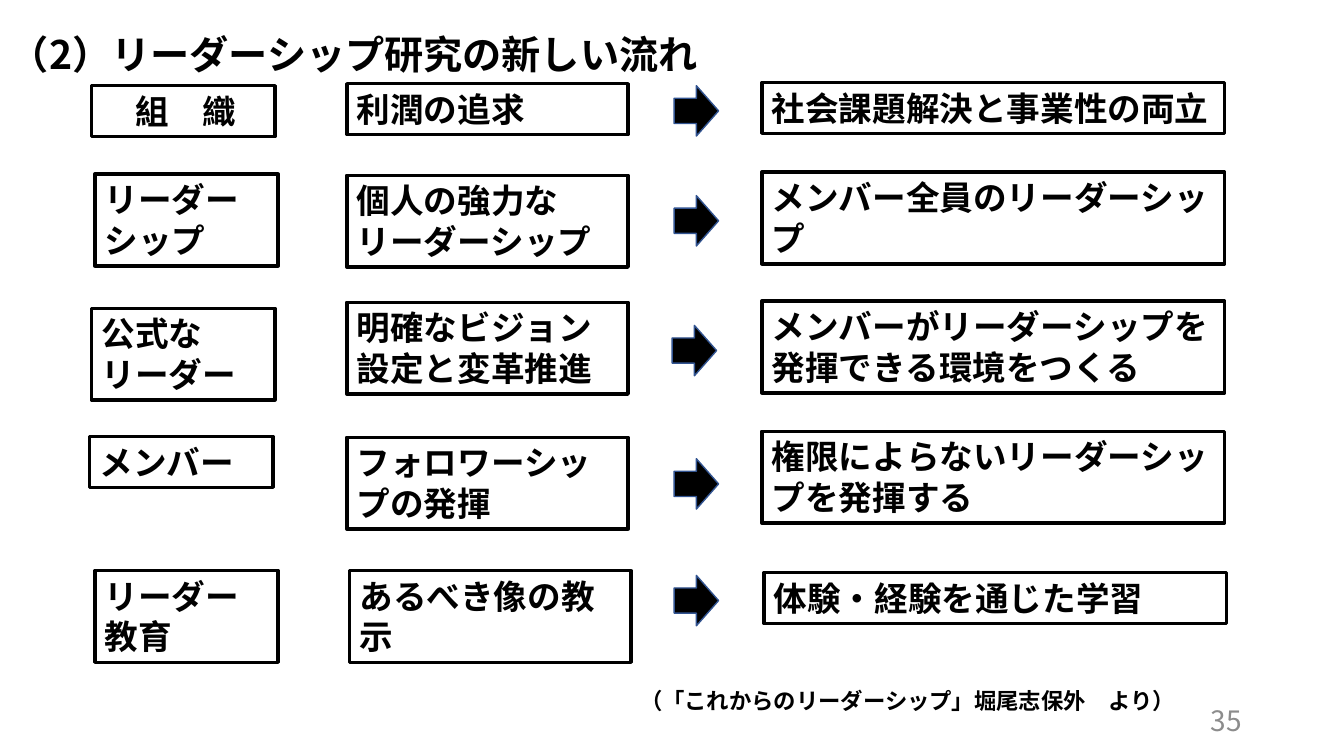
from lxml import etree
from pptx import Presentation
from pptx.dml.color import RGBColor
from pptx.enum.shapes import MSO_SHAPE
from pptx.enum.text import MSO_ANCHOR, PP_ALIGN
from pptx.oxml.ns import qn
from pptx.util import Cm, Pt

# Content
FONT = "Noto Sans CJK JP"
COLORS = {"ink": "000000", "arrow_edge": "325491", "page": "8C8C8C"}
TITLE = "（2）リーダーシップ研究の新しい流れ"
CITATION = "（「これからのリーダーシップ」堀尾志保外　より）"
PAGE = "35"

# Each row: (text, left, top, lines) for theme, old view, new view; then arrow (left, top)
ROWS = [
    (("　組　織", 2.31, 2.16, 1), ("利潤の追求", 8.74, 2.11, 1),
     ("社会課題解決と事業性の両立", 19.2, 2.08, 1), (16.99, 2.16)),
    (("リーダーシップ", 2.39, 4.39, 2), ("個人の強力なリーダーシップ", 8.74, 4.42, 2),
     ("メンバー全員のリーダーシップ", 19.2, 4.34, 2), (16.99, 4.93)),
    (("公式なリーダー", 2.31, 7.77, 2), ("明確なビジョン設定と変革推進", 8.74, 7.62, 2),
     ("メンバーがリーダーシップを発揮できる環境をつくる", 19.2, 7.59, 2), (16.94, 8.2)),
    (("メンバー", 2.26, 11, 1), ("フォロワーシップの発揮", 8.74, 11.02, 2),
     ("権限によらないリーダーシップを発揮する", 19.2, 10.87, 2), (16.99, 11.56)),
    (("リーダー教育", 2.39, 14.38, 2), ("あるべき像の教示", 8.81, 14.38, 2),
     ("体験・経験を通じた学習", 19.25, 14.43, 1), (16.99, 14.5)),
]
COLUMN_WIDTHS = (4.62, 7.09, 11.66)
BOX_HEIGHTS = {1: 1.28, 2: 2.31}
ARROW_SIZE = (1.12, 1.27)

deck = Presentation()
deck.slide_width, deck.slide_height = Cm(33.87), Cm(19.05)
slide = deck.slides.add_slide(deck.slide_layouts[6])


def rgb(name):
    return RGBColor.from_string(COLORS[name])


def write(shape, text, size, color="ink", bold=True,
          align=PP_ALIGN.LEFT, anchor=MSO_ANCHOR.TOP):
    frame = shape.text_frame
    frame.word_wrap = True
    frame.vertical_anchor = anchor
    paragraph = frame.paragraphs[0]
    paragraph.text = text
    paragraph.alignment = align
    font = paragraph.font
    font.size, font.bold, font.name = Pt(size), bold, FONT
    font.color.rgb = rgb(color)
    # East Asian typeface
    defaults = paragraph._p.pPr.find(qn("a:defRPr"))
    etree.SubElement(defaults, qn("a:ea")).set("typeface", FONT)


def add_label(text, left, top, width, height, size, **style):
    label = slide.shapes.add_textbox(Cm(left), Cm(top), Cm(width), Cm(height))
    write(label, text, size, **style)


def add_outlined(kind, left, top, width, height, edge, weight):
    shape = slide.shapes.add_shape(kind, Cm(left), Cm(top), Cm(width), Cm(height))
    shape.shadow.inherit = False
    shape.line.color.rgb = rgb(edge)
    shape.line.width = Pt(weight)
    return shape


# Title
add_label(TITLE, 0, 0.64, 21.49, 1.45, 28)

# Rows of boxes, with an arrow from old view to new view
for *cells, arrow_place in ROWS:
    for (text, left, top, lines), width in zip(cells, COLUMN_WIDTHS):
        box = add_outlined(MSO_SHAPE.RECTANGLE, left, top, width,
                           BOX_HEIGHTS[lines], "ink", 2.5)
        box.fill.background()
        write(box, text, 24)
    arrow = add_outlined(MSO_SHAPE.RIGHT_ARROW, *arrow_place, *ARROW_SIZE,
                         "arrow_edge", 1)
    arrow.fill.solid()
    arrow.fill.fore_color.rgb = rgb("ink")

# Citation and page number
add_label(CITATION, 15.88, 17.2, 14.96, 0.94, 16)
add_label(PAGE, 23.93, 17.65, 7.62, 1.02, 20, color="page", bold=False,
          align=PP_ALIGN.RIGHT, anchor=MSO_ANCHOR.MIDDLE)

deck.save("out.pptx")
